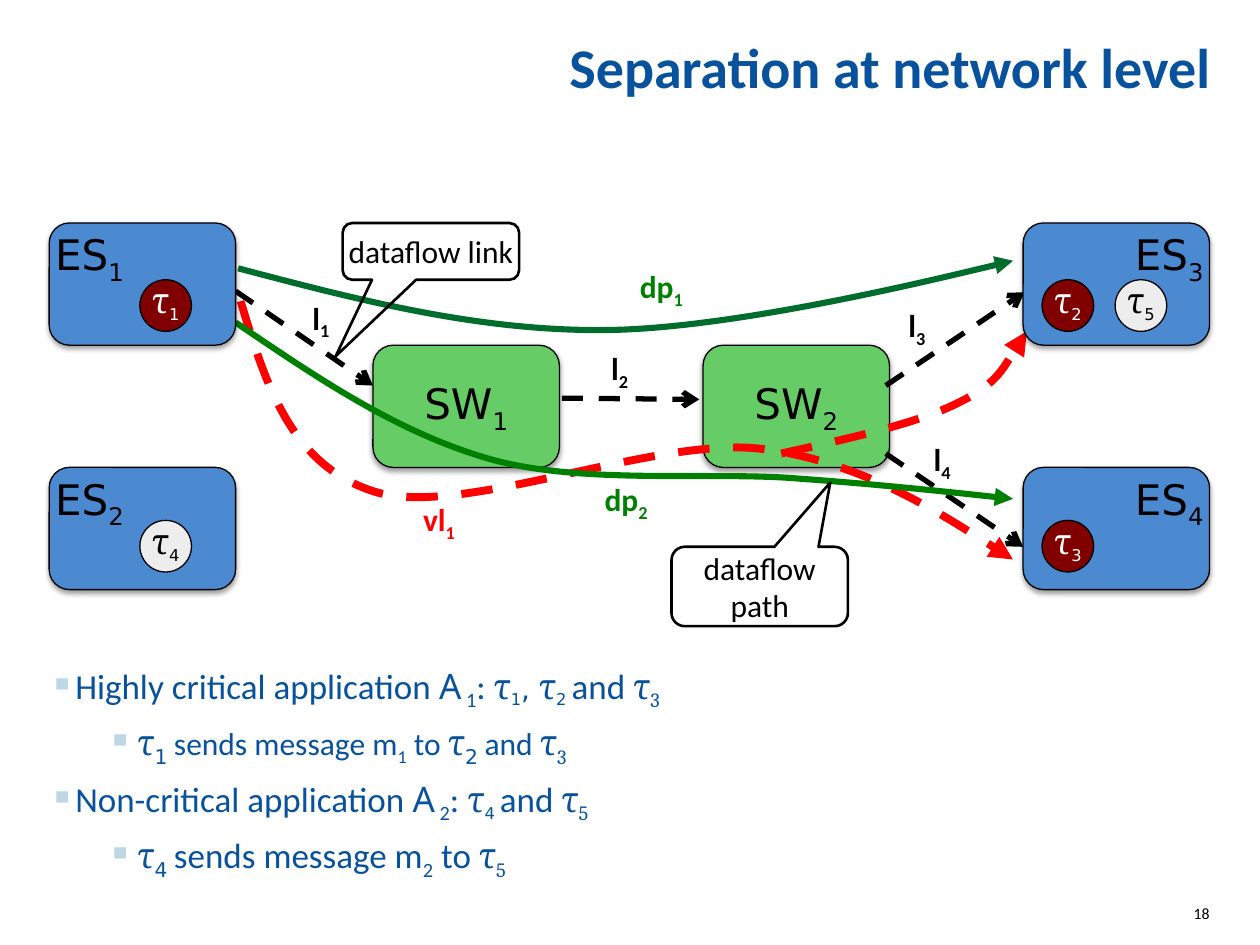
from collections import namedtuple
from dataclasses import dataclass

from lxml.etree import Element, SubElement
from pptx import Presentation
from pptx.dml.color import RGBColor
from pptx.enum.dml import MSO_LINE
from pptx.enum.shapes import MSO_CONNECTOR, MSO_SHAPE
from pptx.enum.text import MSO_ANCHOR, MSO_AUTO_SIZE, PP_ALIGN
from pptx.oxml.ns import qn
from pptx.util import Pt

SCALE = 9144  # EMU per px, 100 px to the inch


@dataclass(frozen=True)
class Theme:
    blue: str = "08519C"
    bullet: str = "BDD7E7"
    system: str = "4B89D0"
    switch: str = "66CC66"
    critical: str = "800000"
    normal: str = "EDEDED"
    red: str = "FF0000"
    green: str = "008000"
    dark_green: str = "006D2C"
    black: str = "000000"
    white: str = "FFFFFF"
    body: str = "Calibri"
    node: str = "DejaVu Sans"
    greek: str = "Cambria"
    letter: str = "Noto Sans"
    title_size: int = 32
    node_size: int = 24
    text_size: int = 20
    label_size: int = 18
    sub_size: int = 16
    number_size: int = 9


T = Theme()


class Box(namedtuple("Box", "x y w h")):
    def inner(self, x, y, w, h):
        return Box(self.x + x, self.y + y, w, h)

    def point(self, x, y):
        return self.x + x, self.y + y

    def emu(self):
        return [v * SCALE for v in self]


def write(p, text, size=T.label_size, font=T.body, color=T.black, bold=False, sub=False):
    r = p.add_run()
    r.text = text
    r.font.size, r.font.name, r.font.bold = Pt(size), font, bold
    r.font.color.rgb = RGBColor.from_string(color)
    if sub:
        r.font._element.set("baseline", "-25000")


def frame(sp, anchor=MSO_ANCHOR.TOP, align=PP_ALIGN.LEFT, inset=0, wrap=True):
    """Format the text frame and return its first paragraph."""
    tf = sp.text_frame
    tf.word_wrap, tf.auto_size, tf.vertical_anchor = wrap, MSO_AUTO_SIZE.NONE, anchor
    tf.margin_left = tf.margin_right = inset * SCALE
    tf.margin_top = tf.margin_bottom = inset * SCALE // 2
    tf.paragraphs[0].alignment = align
    return tf.paragraphs[0]


def shape(shapes, kind, box, fill=None, width=0.75, shadow=False):
    sp = shapes.add_shape(kind, *box.emu())
    if fill:
        sp.fill.solid()
        sp.fill.fore_color.rgb = RGBColor.from_string(fill)
    else:
        sp.fill.background()
    sp.line.width = Pt(width)
    sp.line.color.rgb = RGBColor.from_string(T.black)
    sp.shadow.inherit = False
    if shadow:
        effects = sp._element.spPr.find(qn("a:effectLst"))
        outer = SubElement(effects, qn("a:outerShdw"), blurRad="39400", dist="20300",
                           dir="5400000", rotWithShape="0")
        color = SubElement(outer, qn("a:srgbClr"), val=T.black)
        SubElement(color, qn("a:alpha"), val="38000")
    return sp


def arrow_line(line, color, width, head, dashed):
    line.color.rgb = RGBColor.from_string(color)
    line.width = Pt(width)
    if dashed:
        line.dash_style = MSO_LINE.DASH
    SubElement(line._get_or_add_ln(), qn("a:tailEnd"), type=head)


def link(shapes, start, end):
    ends = [v * SCALE for v in start + end]
    sp = shapes.add_connector(MSO_CONNECTOR.STRAIGHT, *ends)
    arrow_line(sp.line, T.black, 3, "arrow", True)
    SubElement(sp._element.spPr, qn("a:effectLst"))


def curve(shapes, points, color, width, dashed=False):
    """Draw cubic curves: a start point, then three points for each curve."""
    builder = shapes.build_freeform(*points[0], scale=SCALE)
    builder.add_line_segments(points[1:], close=False)
    sp = builder.convert_to_shape()
    segments = list(sp._element.iter(qn("a:lnTo")))
    for i in range(0, len(segments), 3):
        bezier = Element(qn("a:cubicBezTo"))
        segments[i].addprevious(bezier)
        for segment in segments[i:i + 3]:
            bezier.append(segment[0])
            segment.getparent().remove(segment)
    sp.fill.background()
    arrow_line(sp.line, color, width, "triangle", dashed)
    sp.shadow.inherit = False


def node(shapes, box, name, number, fill, anchor, align):
    sp = shape(shapes, MSO_SHAPE.ROUNDED_RECTANGLE, box, fill, shadow=True)
    p = frame(sp, anchor, align)
    write(p, name, T.node_size, T.node)
    write(p, number, T.node_size, T.node, sub=True)


def task(shapes, box, number, critical):
    sp = shape(shapes, MSO_SHAPE.OVAL, box, T.critical if critical else T.normal)
    p = frame(sp, MSO_ANCHOR.BOTTOM, PP_ALIGN.CENTER)
    color = T.white if critical else T.black
    write(p, "τ", T.text_size, T.greek, color)
    write(p, number, T.sub_size, T.node, color, sub=True)


def end_system(shapes, box, number, align, tasks):
    group = shapes.add_group_shape().shapes
    node(group, box, "ES", number, T.system, MSO_ANCHOR.TOP, align)
    for x, y, task_number, critical in tasks:
        task(group, box.inner(x, y, 41, 41), task_number, critical)


def label(shapes, box, name, color=T.black, inset=0):
    p = frame(shapes.add_textbox(*box.emu()), inset=inset)
    write(p, name[:-1], color=color, bold=True)
    write(p, name[-1], color=color, bold=True, sub=True)


def callout(shapes, box, text, tip, wrap):
    sp = shape(shapes, MSO_SHAPE.ROUNDED_RECTANGULAR_CALLOUT, box, width=1.5)
    sp.adjustments[0], sp.adjustments[1] = tip
    write(frame(sp, MSO_ANCHOR.MIDDLE, PP_ALIGN.CENTER, 10, wrap), text)


def network(shapes, box):
    for x, number in ((257, "1"), (519, "2")):
        node(shapes, box.inner(x, 97, 148, 97), "SW", number, T.switch,
             MSO_ANCHOR.MIDDLE, PP_ALIGN.CENTER)
    for start, end in (((148, 54), (257, 129)), ((664, 183), (773, 257)),
                       ((664, 129), (774, 55)), ((407, 139), (516, 140))):
        link(shapes, box.point(*start), box.point(*end))

    branch = [(581, 183), (635, 171), (689, 159), (721, 143), (754, 127), (776, 86), (776, 86)]
    vl1 = [(152, 62), (172, 128), (192, 194), (261, 214), (330, 233),
           (479, 170), (563, 179), (647, 188), (765, 267), (765, 267)]
    dp1 = [(150, 36), (245, 61), (340, 86), (442, 85), (545, 84), (765, 30), (765, 30)]
    dp2 = [(148, 79), (213, 123), (277, 167), (352, 188), (426, 208),
           (527, 197), (596, 203), (665, 208), (765, 219), (765, 219)]
    for points, *style in ((branch, T.red, 4.5, True), (vl1, T.red, 4.5, True),
                           (dp1, T.dark_green, 3.5), (dp2, T.green, 3.5)):
        curve(shapes, [box.point(*pt) for pt in points], *style)

    for x, y, w, name, color in ((459, 30, 88, "dp1", T.green), (287, 215, 53, "vl1", T.red),
                                 (431, 199, 88, "dp2", T.green)):
        label(shapes, box.inner(x, y, w, 40), name, color, 10)
    for x, y, name in ((209, 60, "l1"), (446, 100, "l2"), (682, 66, "l3"), (702, 172, "l4")):
        label(shapes, box.inner(x, y, 24, 30), name)

    left, right = PP_ALIGN.LEFT, PP_ALIGN.RIGHT
    for x, y, number, align, tasks in (
            (0, 0, "1", left, [(72, 45, "1", True)]),
            (0, 194, "2", left, [(72, 42, "4", False)]),
            (773, 0, "3", right, [(15, 45, "2", True), (73, 45, "5", False)]),
            (773, 194, "4", right, [(15, 42, "3", True)])):
        end_system(shapes, box.inner(x, y, 148, 97), number, align, tasks)
    callout(shapes, box.inner(494, 257, 140, 63), "dataflow path", (0.4, -1.31), True)
    callout(shapes, box.inner(233, 0, 140, 45), "dataflow link", (-0.54, 1.85), False)


def bullets(shapes, box):
    body, small = dict(), dict(size=T.label_size)
    sub, small_sub = dict(sub=True), dict(size=T.label_size, sub=True)
    letter, greek = dict(font=T.letter), dict(font=T.greek)
    greek_sub = dict(font=T.greek, sub=True)
    node_sub = dict(font=T.node, sub=True)
    low, comma = dict(node_sub, size=T.sub_size), dict(font=T.node, size=T.sub_size)
    tau = ("τ", greek)
    lines = (
        (20, [("Highly critical application ", body), ("A", letter), (" 1", sub), (": ", body),
              tau, ("1", low), (", ", comma), tau, ("2 ", low), ("and ", body),
              tau, ("3", greek_sub)]),
        (70, [tau, ("1 ", node_sub), ("sends message m", small), ("1", small_sub),
              (" to ", small), tau, ("2 ", node_sub), ("and ", small), tau, ("3", greek_sub)]),
        (20, [("Non-critical application ", body), ("A", letter), (" 2", sub), (": ", body),
              tau, ("4 ", low), ("and ", body), tau, ("5", greek_sub)]),
        (70, [tau, ("4 ", node_sub), ("sends message m", body), ("2", sub),
              (" to ", body), tau, ("5", greek_sub)]))
    sp = shapes.add_textbox(*box.emu())
    p = frame(sp)
    for i, (margin, runs) in enumerate(lines):
        if i:
            p = sp.text_frame.add_paragraph()
        p.level = int(margin > 20)
        p.space_before = Pt(5)
        pPr = p._p.get_or_add_pPr()
        pPr.set("marL", str(margin * SCALE))
        pPr.set("indent", str(-24 * SCALE if margin > 20 else -20 * SCALE))
        SubElement(SubElement(pPr, qn("a:buClr")), qn("a:srgbClr"), val=T.bullet)
        SubElement(pPr, qn("a:buChar"), char="▪")
        for text, style in runs:
            write(p, text, **{"size": T.text_size, "color": T.blue, **style})


def title(sp, box, text):
    sp.left, sp.top, sp.width, sp.height = box.emu()
    p = frame(sp, MSO_ANCHOR.BOTTOM, PP_ALIGN.RIGHT)
    p.line_spacing = 0.8
    write(p, text, T.title_size, color=T.blue, bold=True)


def slide_number(shapes, box, text):
    p = frame(shapes.add_textbox(*box.emu()), align=PP_ALIGN.RIGHT)
    write(p, text, T.number_size)


def main():
    prs = Presentation()
    prs.slide_width, prs.slide_height = 1000 * SCALE, 750 * SCALE
    s = prs.slides.add_slide(prs.slide_layouts[5])
    title(s.shapes.title, Box(39, 0, 922, 79), "Separation at network level")
    network(s.shapes, Box(39, 177, 922, 320))
    bullets(s.shapes, Box(39, 527, 667, 180))
    slide_number(s.shapes, Box(927, 717, 33, 33), "18")
    prs.save("out.pptx")


if __name__ == "__main__":
    main()
